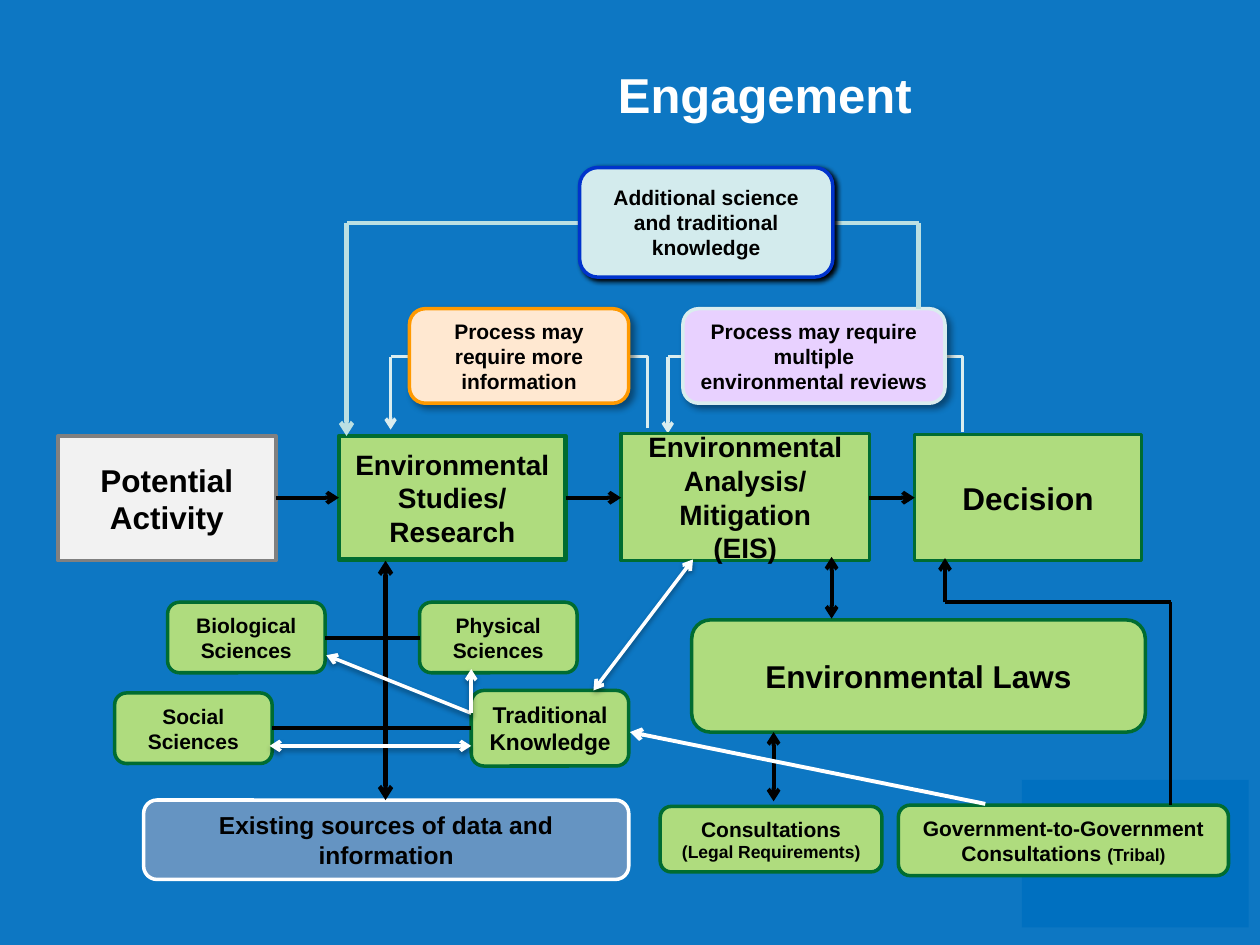
from lxml.etree import SubElement
from pptx import Presentation
from pptx.dml.color import RGBColor
from pptx.enum.shapes import MSO_CONNECTOR, MSO_SHAPE
from pptx.enum.text import MSO_ANCHOR, PP_ALIGN
from pptx.oxml.ns import qn
from pptx.util import Inches, Pt

BACK = RGBColor(0x0D, 0x77, 0xC3)
PANEL = RGBColor(0x00, 0x70, 0xC0)
WHITE = RGBColor(0xFF, 0xFF, 0xFF)
BLACK = RGBColor(0x00, 0x00, 0x00)
GREEN = RGBColor(0xAF, 0xDC, 0x7E)
FOREST = RGBColor(0x00, 0x6C, 0x31)
PALE = RGBColor(0xF2, 0xF2, 0xF2)
GREY = RGBColor(0x80, 0x80, 0x80)
ROSE = RGBColor(0xFE, 0xC6, 0xC2)
LILAC = RGBColor(0xE8, 0xD1, 0xFF)
CREAM = RGBColor(0xFF, 0xE8, 0xD1)
ORANGE = RGBColor(0xFF, 0x99, 0x00)
ICE = RGBColor(0xDA, 0xED, 0xEF)
AQUA = RGBColor(0xBB, 0xE0, 0xE3)
MIST = RGBColor(0xD3, 0xEB, 0xED)
ROYAL = RGBColor(0x00, 0x33, 0xCC)

RECT, ROUND = MSO_SHAPE.RECTANGLE, MSO_SHAPE.ROUNDED_RECTANGLE
# Shadows: opacity in percent, blur and distance in points, angle in degrees
SOFT = (40, 4, 3, 45)
HARD = (100, 3, 2, 45)
DROP = (38, 3.1, 1.6, 90)


def cast(shape, shadow=None):
    """Give the shape this shadow, or none at all."""
    effects = SubElement(shape._element.spPr, qn("a:effectLst"))
    if shadow:
        alpha, blur, dist, angle = shadow
        outer = SubElement(effects, qn("a:outerShdw"), blurRad=str(Pt(blur)),
                           dist=str(Pt(dist)), dir=str(angle * 60000),
                           algn="ctr", rotWithShape="0")
        color = SubElement(outer, qn("a:srgbClr"), val=str(BLACK))
        SubElement(color, qn("a:alpha"), val=str(alpha * 1000))


def write(frame, lines, size, color=BLACK):
    """Fill the frame; each line is a list of (text, size) runs or a string."""
    for i, line in enumerate(lines):
        para = frame.paragraphs[0] if i == 0 else frame.add_paragraph()
        para.alignment = PP_ALIGN.CENTER
        for text, points in [(line, size)] if isinstance(line, str) else line:
            run = para.add_run()
            run.text = text
            run.font.name, run.font.size = "Arial", Pt(points)
            run.font.bold, run.font.color.rgb = True, color


def box(slide, kind, place, lines=(), size=12, fill=GREEN, edge=FOREST,
        width=2, shadow=None):
    shape = slide.shapes.add_shape(kind, *map(Inches, place))
    shape.fill.solid()
    shape.fill.fore_color.rgb = fill
    if edge is None:
        shape.line.fill.background()
    else:
        shape.line.color.rgb, shape.line.width = edge, Pt(width)
    cast(shape, shadow)
    frame = shape.text_frame
    frame.word_wrap = True
    frame.vertical_anchor = MSO_ANCHOR.MIDDLE
    write(frame, lines, size)
    return shape


def link(slide, ends, color=BLACK, width=2.25, tips="", shadow=None,
         kind=MSO_CONNECTOR.STRAIGHT):
    """Draw a line; tips holds "h" and "t" for arrows at its start and end."""
    line = slide.shapes.add_connector(kind, *map(Inches, ends))
    line.line.color.rgb, line.line.width = color, Pt(width)
    cast(line, shadow)
    stroke = line.line._get_or_add_ln()
    for key, tag in (("h", "a:headEnd"), ("t", "a:tailEnd")):
        if key in tips:
            SubElement(stroke, qn(tag), type="arrow")
    return line


def bend(slide, x1, y1, x2, y2):
    """Draw a line up from (x1, y1), then left to (x2, y2)."""
    x, y = (x1 + x2) / 2, (y1 + y2) / 2
    dx, dy = (y1 - y2) / 2, (x1 - x2) / 2
    line = link(slide, (x - dx, y + dy, x + dx, y - dy), ICE, 2,
                kind=MSO_CONNECTOR.ELBOW)
    props = line._element.spPr
    props.find(qn("a:xfrm")).set("rot", str(270 * 60000))
    props.find(qn("a:prstGeom")).set("prst", "bentConnector2")


def loops(slide):
    for x1, y1, x2, tip in ((7.64, 3.43, 5.3, 3.44), (5.14, 3.4, 3.1, 3.41)):
        bend(slide, x1, y1, x2, 2.83)
        link(slide, (x2, 2.83, x2, tip), ICE, 2, "t")


def stages(slide):
    box(slide, RECT, (0.46, 3.46, 1.73, 0.99), ["Potential Activity"], 18,
        PALE, GREY)
    box(slide, RECT, (2.69, 3.46, 1.8, 0.98),
        ["Environmental Studies/", "Research"], 16, width=2.5)
    box(slide, RECT, (4.93, 3.44, 1.97, 1.01),
        ["Environmental Analysis/ Mitigation", "(EIS)"], 16)
    box(slide, RECT, (7.26, 3.45, 1.8, 1), ["Decision"], 18)
    for start, end in ((2.19, 2.69), (4.49, 4.93), (6.9, 7.26)):
        link(slide, (start, 3.95, end, 3.95), tips="t")


def inputs(slide):
    for x, y, name in ((3.33, 4.78, "Physical"), (1.33, 4.78, "Biological"),
                       (0.91, 5.5, "Social")):
        box(slide, ROUND, (x, y, 1.25, 0.56), [name + " Sciences"])
    box(slide, ROUND, (3.74, 5.48, 1.25, 0.6), ["Traditional Knowledge"], 13)
    data = box(slide, ROUND, (1.14, 6.35, 3.85, 0.63),
               ["Existing sources of data and information"], 14, ROSE, WHITE)
    data.text_frame.vertical_anchor = MSO_ANCHOR.TOP
    color = data._element.spPr.find(qn("a:solidFill"))[0]
    SubElement(color, qn("a:alpha"), val="37000")
    link(slide, (3.06, 6.35, 3.06, 4.45), width=2.5, tips="ht")
    link(slide, (2.58, 5.06, 3.33, 5.06))
    link(slide, (2.16, 5.78, 3.74, 5.78))


def reviews(slide):
    box(slide, ROUND, (5.42, 2.45, 2.08, 0.75),
        ["Process may require multiple environmental reviews"],
        fill=LILAC, edge=ICE, shadow=SOFT)
    box(slide, ROUND, (3.25, 2.45, 1.74, 0.75),
        ["Process may require more information"],
        fill=CREAM, edge=ORANGE, shadow=SOFT)
    link(slide, (7.29, 1.77, 2.75, 1.77), AQUA, 2.5)
    link(slide, (2.75, 1.77, 2.75, 3.46), AQUA, 2.5, "t")
    link(slide, (7.29, 1.77, 7.29, 2.45), AQUA, 2.5)
    box(slide, ROUND, (4.6, 1.33, 2.01, 0.87),
        ["Additional science and traditional knowledge"],
        fill=MIST, edge=ROYAL, shadow=HARD)


def laws(slide):
    box(slide, ROUND, (5.49, 4.92, 3.6, 0.89), ["Environmental Laws"], 18)
    box(slide, ROUND, (5.24, 6.4, 1.76, 0.52),
        ["Consultations", [("(Legal Requirements)", 10)]])
    box(slide, ROUND, (7.13, 6.39, 2.62, 0.56),
        ["Government-to-Government",
         [("Consultations ", 12), ("(Tribal)", 10)]])
    link(slide, (6.14, 6.36, 6.14, 5.81), tips="ht")
    link(slide, (6.6, 4.91, 6.6, 4.42), tips="ht")
    link(slide, (9.29, 6.39, 9.29, 4.78))
    link(slide, (9.29, 4.78, 7.5, 4.78))
    link(slide, (7.5, 4.78, 7.5, 4.43), tips="t")


def sharing(slide):
    """Draw the white arrows around traditional knowledge."""
    link(slide, (7.82, 6.38, 5, 5.81), WHITE, tips="t")
    for ends, tips in (((4.71, 5.48, 5.5, 4.44), "ht"),
                       ((3.74, 5.92, 2.14, 5.92), "ht"),
                       ((3.74, 5.66, 2.59, 5.2), "t"),
                       ((3.74, 5.66, 3.74, 5.31), "t")):
        link(slide, ends, WHITE, 2, tips, DROP)


def title(slide):
    area = slide.shapes.add_textbox(*map(Inches, (4.79, 0.46, 2.56, 0.57)))
    area.text_frame.word_wrap = False
    write(area.text_frame, ["Engagement"], 28, WHITE)


def main():
    deck = Presentation()
    deck.slide_width, deck.slide_height = Inches(10), Inches(7.5)
    slide = deck.slides.add_slide(deck.slide_layouts[6])
    slide.background.fill.solid()
    slide.background.fill.fore_color.rgb = BACK
    box(slide, RECT, (8.11, 6.19, 1.8, 1.17), fill=PANEL, edge=None)
    for draw in (loops, stages, inputs, reviews, laws, sharing, title):
        draw(slide)
    deck.save("out.pptx")


if __name__ == "__main__":
    main()
